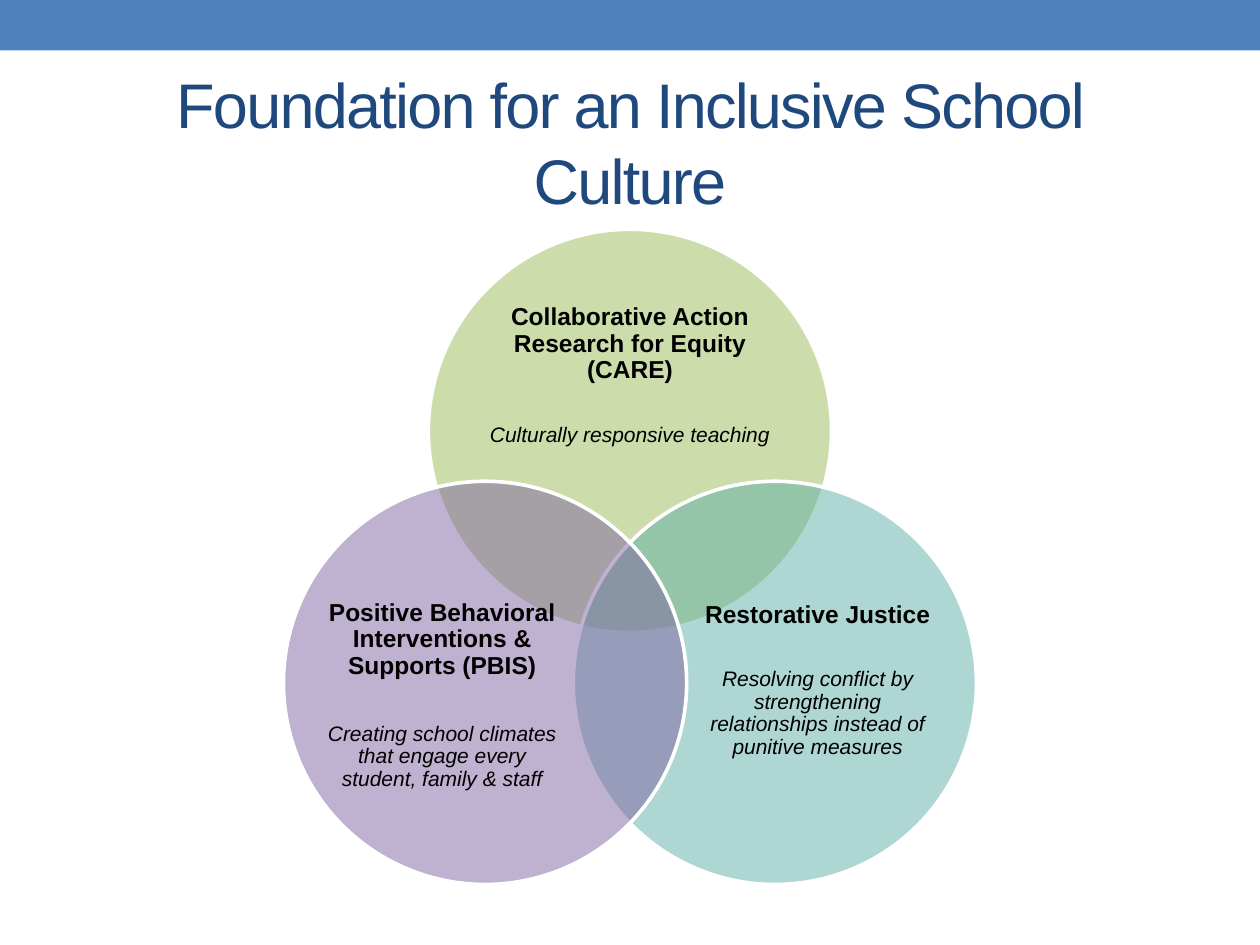
"""Builds a slide with a three-circle Venn diagram on inclusive school culture."""
import pptx
import pptx.dml.color
import pptx.enum.shapes
import pptx.enum.text
import pptx.oxml.ns
import pptx.util
from lxml import etree

TITLE = "Foundation for an Inclusive School Culture"

PILLARS = [
    {"name": "Collaborative Action Research for Equity (CARE)",
     "aim": "Culturally responsive teaching",
     "fill": "care", "side": 0, "gap": 23, "foot": 17},
    {"name": "Restorative Justice",
     "aim": "Resolving conflict by strengthening relationships instead of punitive measures",
     "fill": "justice", "side": 1, "gap": 22.5, "foot": 17},
    {"name": "Positive Behavioral Interventions & Supports (PBIS)",
     "aim": "Creating school climates that engage every student, family & staff",
     "fill": "pbis", "side": -1, "gap": 25, "foot": 0},
]

THEME = {
    "font": "Arial",
    "colors": {"bar": "4F81BD", "title": "1F497D", "text": "000000", "outline": "FFFFFF",
               "care": "9BBB59", "justice": "5EAFA6", "pbis": "8064A2"},
    "sizes": {"title": 36, "name": 14, "aim": 12},
    "opacity": 50,
    "outline_width": 2.08,
}

WIDTH, HEIGHT = 10, 7.5
DIAMETER = 3.2
TOP_ROW, BOTTOM_ROW = 1.82, 3.82
SPREAD = 1.15
LABEL_SPREAD = 1.49


def color(key):
    return pptx.dml.color.RGBColor.from_string(THEME["colors"][key])


def inches(*lengths):
    return [pptx.util.Inches(length) for length in lengths]


def add_filled(slide, kind, box, fill):
    shape = slide.shapes.add_shape(kind, *inches(*box))
    shape.shadow.inherit = False
    shape.fill.solid()
    shape.fill.fore_color.rgb = color(fill)
    shape.line.fill.background()
    return shape


def add_text_frame(slide, box):
    frame = slide.shapes.add_textbox(*inches(*box)).text_frame
    frame.word_wrap = True
    frame.vertical_anchor = pptx.enum.text.MSO_ANCHOR.MIDDLE
    return frame


def write(paragraph, text, role, ink):
    paragraph.text = text
    paragraph.alignment = pptx.enum.text.PP_ALIGN.CENTER
    paragraph.font.name = THEME["font"]
    paragraph.font.size = pptx.util.Pt(THEME["sizes"][role])
    paragraph.font.color.rgb = color(ink)


def add_title(slide):
    heading = add_text_frame(slide, (0.5, 0.58, 9, 1.08)).paragraphs[0]
    write(heading, TITLE, "title", "title")
    heading.runs[0].font._element.set("spc", "-100")


def add_circle(slide, pillar):
    left = (WIDTH - DIAMETER) / 2 + pillar["side"] * SPREAD
    top = BOTTOM_ROW if pillar["side"] else TOP_ROW
    circle = add_filled(slide, pptx.enum.shapes.MSO_SHAPE.OVAL,
                        (left, top, DIAMETER, DIAMETER), pillar["fill"])
    circle.line.color.rgb = color("outline")
    circle.line.width = pptx.util.Pt(THEME["outline_width"])
    qn = pptx.oxml.ns.qn
    tint = circle._element.spPr.find(qn("a:solidFill")).find(qn("a:srgbClr"))
    etree.SubElement(tint, qn("a:alpha")).set("val", str(THEME["opacity"] * 1000))


def add_label(slide, pillar):
    if pillar["side"]:
        width, height = DIAMETER * 0.6, DIAMETER * 0.55
        top = BOTTOM_ROW + 0.82
    else:
        width, height = 2.35, DIAMETER * 0.45
        top = TOP_ROW + 0.56
    left = (WIDTH - width) / 2 + pillar["side"] * LABEL_SPREAD
    frame = add_text_frame(slide, (left, top, width, height))
    frame.margin_left = frame.margin_right = frame.margin_top = 0
    frame.margin_bottom = pptx.util.Pt(pillar["foot"])
    name, aim = frame.paragraphs[0], frame.add_paragraph()
    write(name, pillar["name"], "name", "text")
    write(aim, pillar["aim"], "aim", "text")
    name.font.bold = True
    aim.font.italic = True
    name.line_spacing = aim.line_spacing = 0.9
    name.space_after = pptx.util.Pt(pillar["gap"])


def main():
    deck = pptx.Presentation()
    deck.slide_width, deck.slide_height = inches(WIDTH, HEIGHT)
    slide = deck.slides.add_slide(deck.slide_layouts[6])
    add_filled(slide, pptx.enum.shapes.MSO_SHAPE.RECTANGLE, (0, 0, WIDTH, 0.4), "bar")
    add_title(slide)
    for pillar in PILLARS:
        add_circle(slide, pillar)
        add_label(slide, pillar)
    deck.save("out.pptx")


if __name__ == "__main__":
    main()
